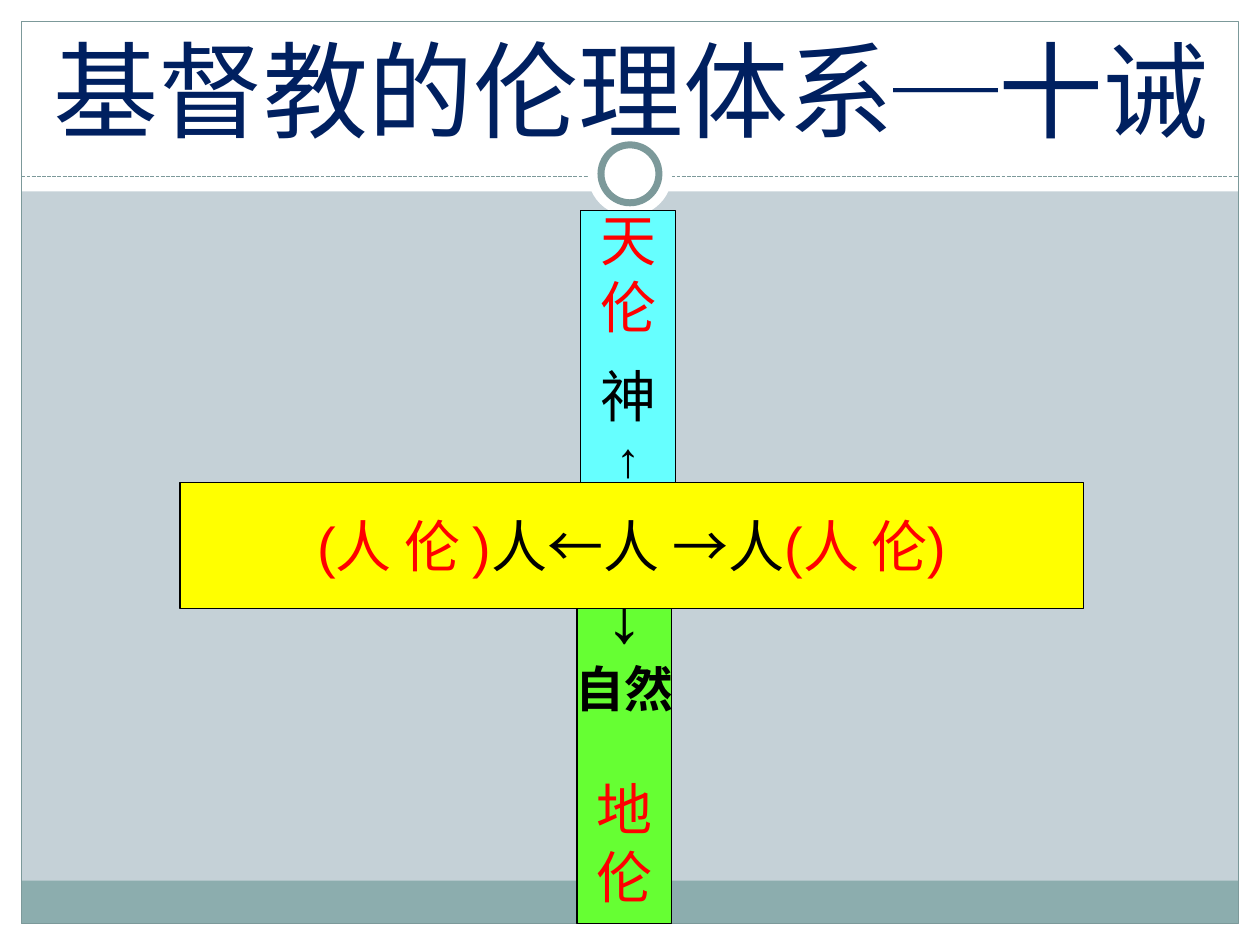
from dataclasses import dataclass

from lxml import etree
from pptx import Presentation
from pptx.dml.color import RGBColor
from pptx.enum.dml import MSO_LINE
from pptx.enum.shapes import MSO_CONNECTOR, MSO_SHAPE
from pptx.enum.text import MSO_ANCHOR, PP_ALIGN
from pptx.oxml.ns import qn
from pptx.util import Inches, Pt

RECT, OVAL, PROCESS = MSO_SHAPE.RECTANGLE, MSO_SHAPE.OVAL, MSO_SHAPE.FLOWCHART_PROCESS
STRAIGHT, DASH = MSO_CONNECTOR.STRAIGHT, MSO_LINE.SQUARE_DOT
CENTER = PP_ALIGN.CENTER
MIDDLE, BOTTOM = MSO_ANCHOR.MIDDLE, MSO_ANCHOR.BOTTOM


@dataclass(frozen=True)
class Theme:
    font: str = "Arial"
    backdrop: str = "C5D1D7"
    white: str = "FFFFFF"
    band: str = "8CADAE"
    frame: str = "7C999A"
    navy: str = "002060"
    black: str = "000000"
    red: str = "FF0000"
    cyan: str = "66FFFF"
    green: str = "66FF33"
    yellow: str = "FFFF00"
    title_size: int = 60
    arrow_size: int = 44
    text_size: int = 32
    small_size: int = 28
    hairline: float = 0.75
    ring: float = 4


THEME = Theme()


def color(code):
    return RGBColor.from_string(code)


def add_box(page, kind, area, fill=None, line=None, width=THEME.hairline):
    box = page.shapes.add_shape(kind, *map(Inches, area))
    box.shadow.inherit = False
    if fill:
        box.fill.solid()
        box.fill.fore_color.rgb = color(fill)
    else:
        box.fill.background()
    if line:
        box.line.color.rgb = color(line)
        box.line.width = Pt(width)
    else:
        box.line.fill.background()
    return box


def add_span(para, text, size, ink, bold=False):
    span = para.add_run()
    span.text = text
    span.font.name = THEME.font
    span.font.size = Pt(size)
    span.font.bold = bold
    span.font.color.rgb = color(ink)


def write_lines(box, lines):
    """Write one centred paragraph for each (space before, spans) pair."""
    frame = box.text_frame
    frame.word_wrap = False
    frame.vertical_anchor = MIDDLE
    for index, (gap, spans) in enumerate(lines):
        para = frame.add_paragraph() if index else frame.paragraphs[0]
        para.alignment = CENTER
        if gap:
            para.space_before = Pt(gap)
        for span in spans:
            add_span(para, *span)


def draw_frame(page, area):
    """Draw the white margins, header, footer band, border and ring."""
    left, top, width, height = area
    margin, header, footer, rule = 0.17, 1.52, 0.34, 1.4
    right, bottom = left + width, top + height
    inner = width - 2 * margin
    for panel in (
        (left, bottom - margin, width, margin),
        (left, top, width, header),
        (left, top, margin, height),
        (right - margin, top, margin, height),
    ):
        add_box(page, RECT, panel, THEME.white)
    add_box(page, RECT, (left + margin, bottom - margin - footer, inner, footer), THEME.band)
    add_box(page, RECT, (left + margin, top + margin, inner, height - 2 * margin), line=THEME.frame)

    divider = page.shapes.add_connector(
        STRAIGHT, *map(Inches, (left + margin, top + rule, right - margin, top + rule)))
    divider.line.color.rgb = color(THEME.frame)
    divider.line.width = Pt(THEME.hairline)
    divider.line.dash_style = DASH
    etree.SubElement(divider.element.spPr, qn("a:effectLst"))

    center_x, center_y = left + width / 2, top + 1.38
    for size, line in ((0.67, None), (0.46, THEME.frame)):
        ring = (center_x - size / 2, center_y - size / 2, size, size)
        add_box(page, OVAL, ring, THEME.white, line, THEME.ring)


def place_title(page, area, text):
    title = page.shapes.title
    title.left, title.top, title.width, title.height = map(Inches, area)
    title.element.getparent().append(title.element)  # in front of the white header
    frame = title.text_frame
    frame.word_wrap = True
    frame.vertical_anchor = BOTTOM
    para = frame.paragraphs[0]
    para.alignment = CENTER
    add_span(para, text, THEME.title_size, THEME.navy)


def draw_cross(page, area):
    """Draw heaven above, people across and earth below."""
    left, top, width, height = area
    column, bar_top, bar_height = 0.75, 2.16, 1.0
    bar_bottom = bar_top + bar_height
    size, small, red, black = THEME.text_size, THEME.small_size, THEME.red, THEME.black

    heaven = add_box(page, PROCESS, (left + 3.18, top, column, bar_top), THEME.cyan, black)
    write_lines(heaven, [
        (0, [("天", size, red)]),
        (0, [("伦", size, red)]),
        (12, [("神", size, black)]),
        (0, [("↑", small, black)]),
    ])

    earth = add_box(page, RECT, (left + 3.15, top + bar_bottom, column, height - bar_bottom),
                    THEME.green, black)
    earth.text_frame.margin_bottom = Inches(0.5)
    write_lines(earth, [
        (0, [("↓", THEME.arrow_size, black)]),
        (0, [("自然", small, black, True)]),
        (33, [("地", size, red)]),
        (0, [("伦", size, red)]),
    ])

    people = add_box(page, RECT, (left, top + bar_top, width, bar_height), THEME.yellow, black)
    write_lines(people, [(0, [
        ("(人 伦 )", size, red),
        ("人←人 →人", size, black),
        ("(人 伦)", size, red),
    ])])


def main():
    deck = Presentation()
    deck.slide_width, deck.slide_height = Inches(10), Inches(7.5)
    page = deck.slides.add_slide(deck.slide_layouts[5])
    page.background.fill.solid()
    page.background.fill.fore_color.rgb = color(THEME.backdrop)
    draw_frame(page, (0, 0, 10, 7.5))
    place_title(page, (0.17, 0.17, 9.67, 1.08), "基督教的伦理体系─十诫")
    draw_cross(page, (1.43, 1.67, 7.17, 5.66))
    deck.save("out.pptx")


if __name__ == "__main__":
    main()
